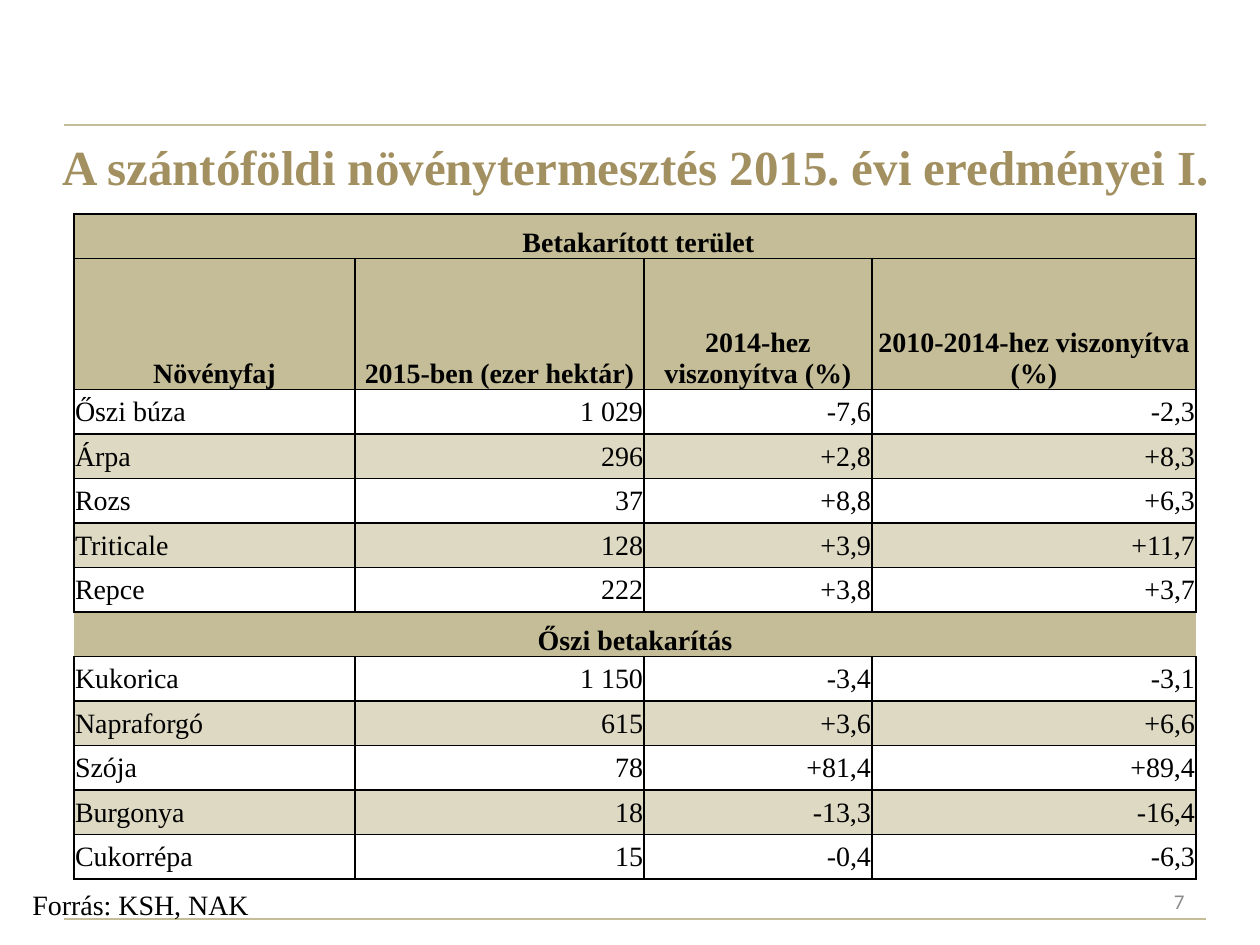
from lxml import etree
from pptx import Presentation
from pptx.dml.color import RGBColor
from pptx.enum import shapes, text
from pptx.oxml.ns import qn
from pptx.util import Emu, Pt

SERIF = "Times New Roman"
BLACK, TAN, SAND, GOLD, GREY = "000000", "C4BD97", "DDD9C3", "A29061", "8C8C8C"
LEFT, CENTER, RIGHT, JUSTIFY = (text.PP_ALIGN.LEFT, text.PP_ALIGN.CENTER,
                                text.PP_ALIGN.RIGHT, text.PP_ALIGN.JUSTIFY)
TOP, MIDDLE, BOTTOM = text.MSO_ANCHOR.TOP, text.MSO_ANCHOR.MIDDLE, text.MSO_ANCHOR.BOTTOM

TITLE = "A szántóföldi növénytermesztés 2015. évi eredményei I."
SOURCE = "Forrás: KSH, NAK"
PAGE = "7"
HEADINGS = ("Növényfaj", "2015-ben (ezer hektár)", "2014-hez viszonyítva (%)",
            "2010-2014-hez viszonyítva (%)")
SUMMER = [
    ("Őszi búza", "1 029", "-7,6", "-2,3"),
    ("Árpa", "296", "+2,8", "+8,3"),
    ("Rozs", "37", "+8,8", "+6,3"),
    ("Triticale", "128", "+3,9", "+11,7"),
    ("Repce", "222", "+3,8", "+3,7"),
]
AUTUMN = [
    ("Kukorica", "1 150", "-3,4", "-3,1"),
    ("Napraforgó", "615", "+3,6", "+6,6"),
    ("Szója", "78", "+81,4", "+89,4"),
    ("Burgonya", "18", "-13,3", "-16,4"),
    ("Cukorrépa", "15", "-0,4", "-6,3"),
]
ROWS = [("\N{NO-BREAK SPACE}Betakarított terület",), HEADINGS, *SUMMER, ("Őszi betakarítás",), *AUTUMN]
HEADING_ROW, SECTION_ROW = 1, 2 + len(SUMMER)
COLUMN_WIDTHS = (281, 289, 228, 324)
TABLE_LEFT, TABLE_TOP, TABLE_HEIGHT, HEADING_HEIGHT = 74, 214, 665, 131
RULE_LEFT, RULE_RIGHT, RULE_TOPS = 64, 1206, (919, 125)


def px(length):
    """Turn pixels into EMU."""
    return Emu(round(length * 914400 / 126))


def color(code):
    """Turn a hex string into a colour."""
    return RGBColor.from_string(code)


def write(frame, words, size=16, font=SERIF, ink=BLACK, bold=False, align=LEFT):
    """Write one formatted paragraph into a text frame."""
    paragraph = frame.paragraphs[0]
    paragraph.alignment = align
    run = paragraph.add_run()
    run.text = words
    run.font.size, run.font.name, run.font.bold = Pt(size), font, bold
    run.font.color.rgb = color(ink)


def add_label(slide, words, box, anchor=MIDDLE, wrap=True, **style):
    """Add a text box holding one paragraph."""
    frame = slide.shapes.add_textbox(*map(px, box)).text_frame
    frame.word_wrap, frame.vertical_anchor = wrap, anchor
    if not wrap:
        frame.auto_size = text.MSO_AUTO_SIZE.SHAPE_TO_FIT_TEXT
    write(frame, words, **style)


def add_rule(slide, top):
    """Add a horizontal rule across the slide."""
    rule = slide.shapes.add_connector(shapes.MSO_CONNECTOR.STRAIGHT, px(RULE_LEFT), px(top),
                                      px(RULE_RIGHT), px(top))
    rule.line.color.rgb, rule.line.width = color(TAN), Pt(0.75)
    etree.SubElement(rule._element.spPr, qn("a:effectLst"))


def set_borders(cell, widths):
    """Draw the cell sides in the order left, right, top, bottom."""
    properties = cell._tc.get_or_add_tcPr()
    for side, width in zip("LRTB", widths):
        line = etree.SubElement(properties, qn(f"a:ln{side}"), w=str(Pt(width)))
        if width:
            fill = etree.SubElement(line, qn("a:solidFill"))
            etree.SubElement(fill, qn("a:srgbClr"), val=BLACK)
        else:
            etree.SubElement(line, qn("a:noFill"))


def border_widths(row, column, shaded):
    """Give the widths of a cell's left, right, top and bottom borders."""
    if row == SECTION_ROW:
        return 0, 0, 1, 1
    if row == 0:
        return 1, 1, 1, 1
    if row == HEADING_ROW:
        return 1, 1, 1, 0.5 if column < 2 else 1
    thin_top = column == 1 and not shaded or column == 0 and row == HEADING_ROW + 1
    thin_bottom = column == 1 and shaded
    return 1, 1, 0.5 if thin_top else 1, 0.5 if thin_bottom else 1


def add_harvest_table(slide):
    """Add the table of harvested areas."""
    table = slide.shapes.add_table(len(ROWS), len(COLUMN_WIDTHS), px(TABLE_LEFT), px(TABLE_TOP),
                                   px(sum(COLUMN_WIDTHS)), px(TABLE_HEIGHT)).table
    table.first_row = table.horz_banding = False
    for column, width in zip(table.columns, COLUMN_WIDTHS):
        column.width = px(width)
    row_height = (TABLE_HEIGHT - HEADING_HEIGHT) / (len(ROWS) - 1)
    for r, values in enumerate(ROWS):
        table.rows[r].height = px(HEADING_HEIGHT if r == HEADING_ROW else row_height)
        heading = r in (0, HEADING_ROW, SECTION_ROW)
        shaded = values in SUMMER[1::2] + AUTUMN[1::2]
        for c in range(len(COLUMN_WIDTHS)):
            cell = table.cell(r, c)
            set_borders(cell, border_widths(r, c, shaded))
            if heading or shaded:
                cell.fill.solid()
                cell.fill.fore_color.rgb = color(TAN if heading else SAND)
            else:
                cell.fill.background()
            cell.margin_left = cell.margin_right = cell.margin_top = px(1)
            cell.margin_bottom = 0
            cell.vertical_anchor = BOTTOM if heading else MIDDLE
            if c < len(values):
                align = CENTER if heading else RIGHT if c else JUSTIFY
                write(cell.text_frame, values[c], bold=heading, align=align)
        if len(values) == 1:
            table.cell(r, 0).merge(table.cell(r, len(COLUMN_WIDTHS) - 1))


def main():
    """Build the slide."""
    deck = Presentation()
    deck.slide_width, deck.slide_height = px(1260), px(945)
    slide = deck.slides.add_slide(deck.slide_layouts[6])
    for top in RULE_TOPS:
        add_rule(slide, top)
    add_label(slide, TITLE, (25, 107, 1221, 118), size=28, ink=GOLD, bold=True, align=CENTER)
    add_label(slide, SOURCE, (20, 881, 244, 47), anchor=TOP, wrap=False)
    add_harvest_table(slide)
    add_label(slide, PAGE, (903, 876, 294, 50), size=12, font="Calibri", ink=GREY, align=RIGHT)
    deck.save("out.pptx")


if __name__ == "__main__":
    main()
